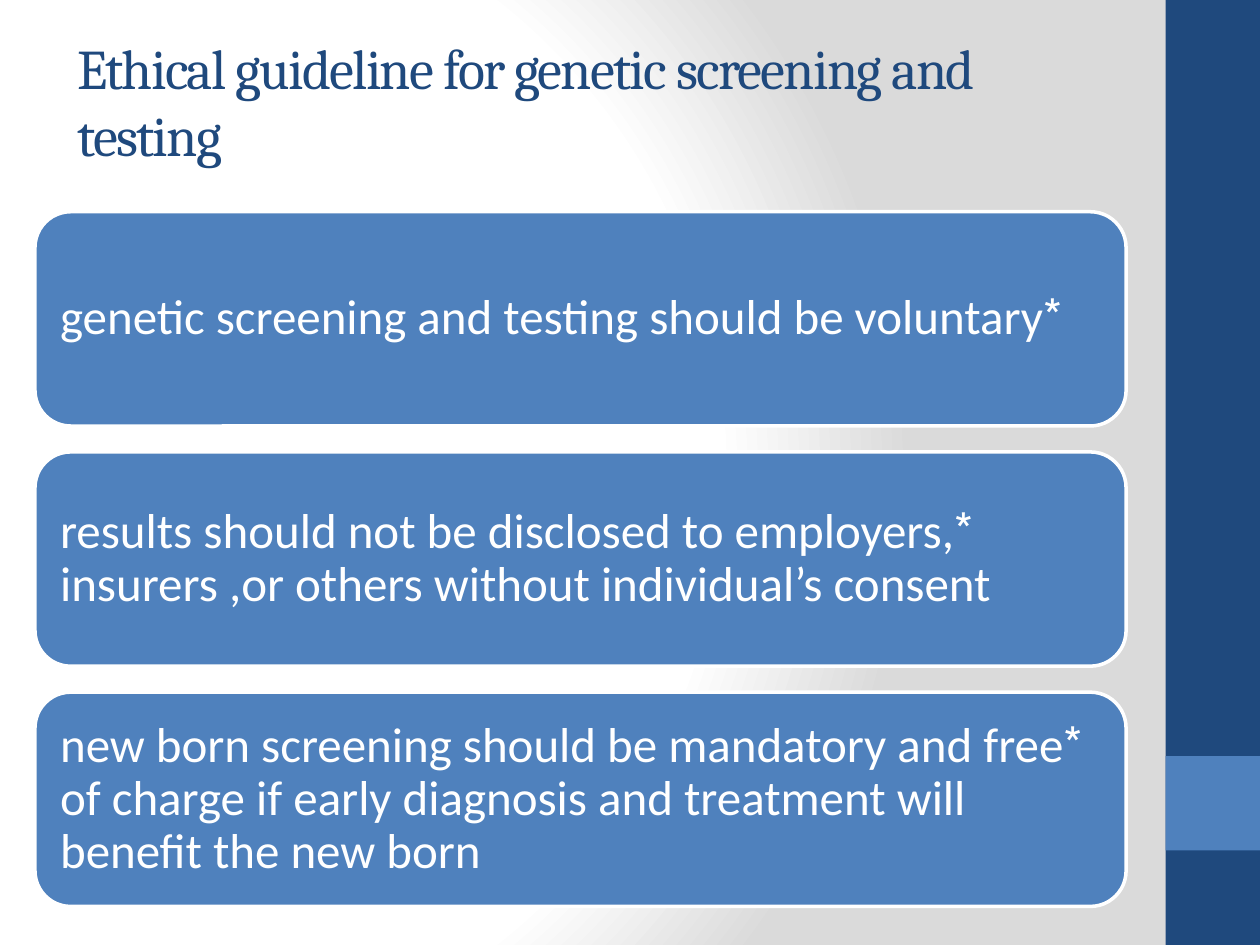
from pptx import Presentation
from pptx.dml.color import RGBColor
from pptx.enum.shapes import MSO_SHAPE as Shape
from pptx.enum.text import MSO_ANCHOR as Anchor, PP_ALIGN as Align
from pptx.oxml import parse_xml
from pptx.oxml.ns import nsdecls
from pptx.util import Pt

COLORS = {"navy": "1F497D", "blue": "4F81BD", "white": "FFFFFF", "gray": "DADADA"}
GUIDELINES = [
    "*genetic screening and testing should be voluntary",
    "*results should not be disclosed to employers, insurers ,or others "
    "without individual’s consent",
    "*new born screening should be mandatory and free of charge if early "
    "diagnosis and treatment will benefit the new born",
]


def color(name):
    return RGBColor.from_string(COLORS[name])


def set_background(slide):
    """Fill the slide with a radial gradient, which python-pptx cannot set."""
    stops = "".join(
        f'<a:gs pos="{position}"><a:srgbClr val="{COLORS[name]}"/></a:gs>'
        for position, name in [(0, "white"), (75000, "white"), (100000, "gray")]
    )
    background = parse_xml(
        f'<p:bg {nsdecls("p", "a")}><p:bgPr><a:gradFill rotWithShape="1">'
        f'<a:gsLst>{stops}</a:gsLst><a:path path="circle">'
        '<a:fillToRect l="20000" t="50000" r="100000" b="50000"/></a:path>'
        '</a:gradFill><a:effectLst/></p:bgPr></p:bg>'
    )
    slide.element.cSld.insert(0, background)


def add_box(slide, kind, left, top, width, height, fill):
    shape = slide.shapes.add_shape(kind, Pt(left), Pt(top), Pt(width), Pt(height))
    shape.shadow.inherit = False
    shape.fill.solid()
    shape.fill.fore_color.rgb = color(fill)
    shape.line.fill.background()
    return shape


def write_text(frame, text, font_name, size, color_name):
    """Write one left-aligned paragraph that reads right to left."""
    frame.word_wrap = True
    paragraph = frame.paragraphs[0]
    paragraph.text = text
    paragraph.alignment = Align.LEFT
    paragraph._p.get_or_add_pPr().set("rtl", "1")
    paragraph.font.name = font_name
    paragraph.font.size = Pt(size)
    paragraph.font.color.rgb = color(color_name)
    return paragraph


def add_sidebar(slide, left, top, width, height):
    add_box(slide, Shape.RECTANGLE, left, top, width, height, "navy")
    add_box(slide, Shape.RECTANGLE, left, top + 0.8 * height, width, width, "blue")


def add_title(slide, left, top, width, height):
    box = slide.shapes.add_textbox(Pt(left), Pt(top), Pt(width), Pt(height))
    frame = box.text_frame
    frame.vertical_anchor = Anchor.BOTTOM
    paragraph = write_text(
        frame, "Ethical guideline for genetic screening and testing", "Cambria", 32, "navy"
    )
    paragraph.runs[0].font._element.set("spc", "-100")


def add_guidelines(slide, left, top, width, height, gap):
    box_height = (height - gap * (len(GUIDELINES) - 1)) / len(GUIDELINES)
    for index, text in enumerate(GUIDELINES):
        box_top = top + index * (box_height + gap)
        box = add_box(slide, Shape.ROUNDED_RECTANGLE, left, box_top, width, box_height, "blue")
        box.line.color.rgb = color("white")
        box.line.width = Pt(2)
        frame = box.text_frame
        frame.vertical_anchor = Anchor.MIDDLE
        frame.margin_left = frame.margin_right = Pt(8.4)
        frame.margin_top = frame.margin_bottom = Pt(8.4)
        paragraph = write_text(frame, text, "Calibri", 28, "white")
        paragraph.line_spacing = 0.9


def main():
    presentation = Presentation()
    presentation.slide_width, presentation.slide_height = Pt(720), Pt(540)
    slide = presentation.slides.add_slide(presentation.slide_layouts[6])
    set_background(slide)
    add_sidebar(slide, 666, 0, 54, 540)
    add_title(slide, 37, 26, 594, 73.5)
    add_guidelines(slide, 20, 121, 623.5, 397, 14.8)
    presentation.save("out.pptx")


if __name__ == "__main__":
    main()
